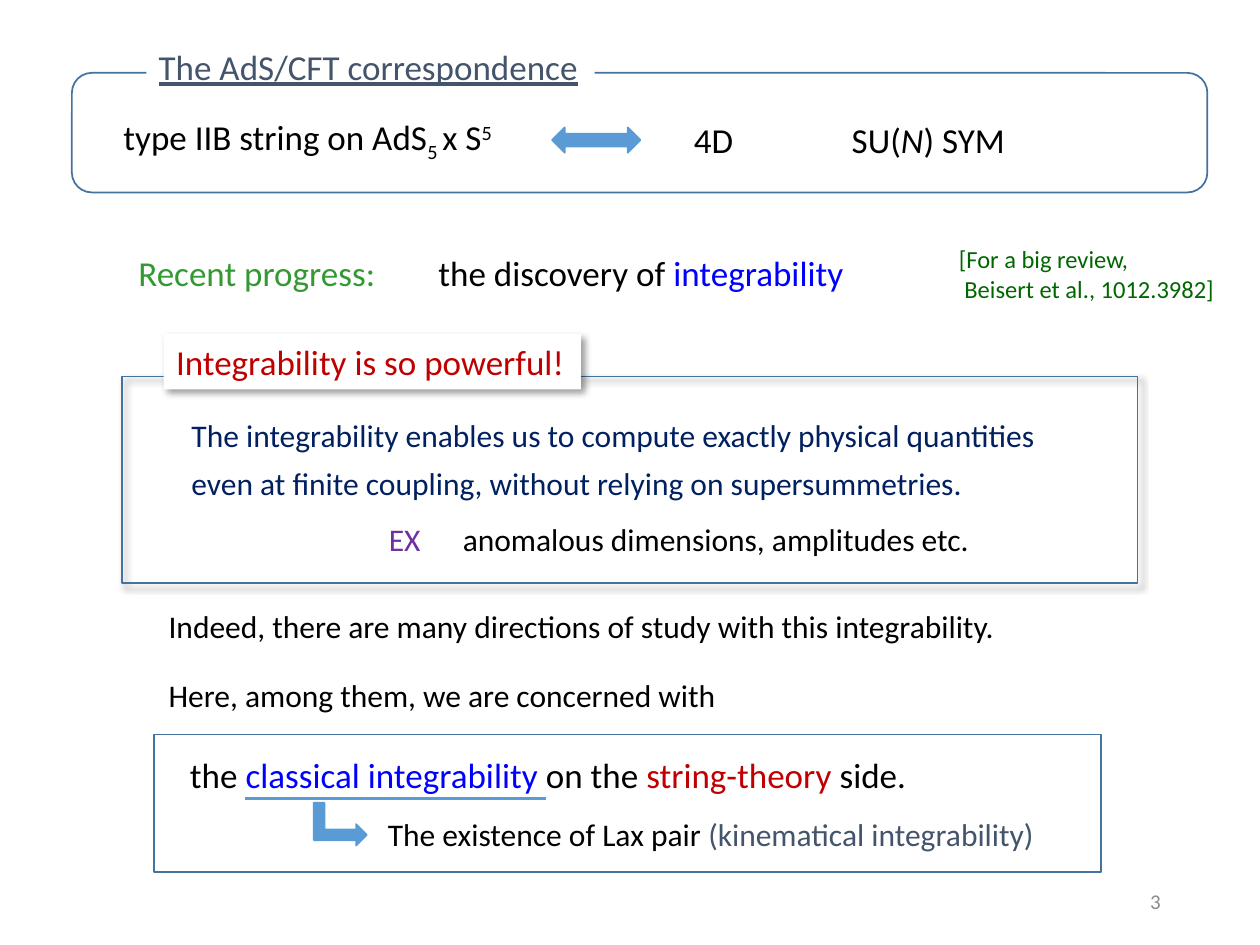
from lxml.etree import SubElement
from pptx import Presentation
from pptx.dml.color import RGBColor
from pptx.enum.shapes import MSO_CONNECTOR, MSO_SHAPE as SHAPE
from pptx.enum.text import MSO_ANCHOR, PP_ALIGN
from pptx.oxml.ns import qn
from pptx.util import Cm, Pt

COLOURS = {
    "black": "000000", "white": "FFFFFF", "grey": "8C8C8C", "slate": "44546A",
    "green": "339933", "dark green": "006600", "blue": "0000FF", "navy": "002060",
    "purple": "7030A0", "red": "C00000", "sky": "5B9BD5", "border": "43739E",
}
FONT = "Calibri"

# Frames: preset, (left, top, width, height) in cm, shadow
FRAMES = [
    (SHAPE.ROUNDED_RECTANGLE, (1.45, 1.47, 22.89, 2.41), False),
    (SHAPE.RECTANGLE, (2.46, 7.59, 20.47, 4.17), True),
    (SHAPE.RECTANGLE, (3.1, 14.81, 19.1, 2.77), False),
]

# Block arrows: preset, box in cm, rotation
ARROWS = [
    (SHAPE.LEFT_RIGHT_ARROW, (11.13, 2.57, 1.78, 0.51), 0),
    (SHAPE.BENT_UP_ARROW, (6.43, 16.08, 0.86, 1.07), 90),
]
UNDERLINE = (4.93, 16.1, 11.0, 16.1)

# Labels sitting on a frame's top edge: box, text, colour, underlined, shadow
LABELS = [
    ((2.95, 0.79, 9.04, 1.12), "The AdS/CFT correspondence", "slate", True, False),
    ((3.3, 6.73, 8.41, 1.12), "Integrability is so powerful!", "red", False, True),
]

# Texts: (left, top, width) in cm, size, paragraphs of (text, colour[, style]) runs
TEXTS = [
    ((2.24, 2.21, 8.6), 20, [[("type IIB string on AdS", "black"), ("5 ", "black", "sub"),
                              ("x S", "black"), ("5", "black", "super")]]),
    ((13.74, 2.26, 2.0), 20, [[("4D", "black")]]),
    ((16.92, 2.26, 4.5), 20, [[("SU(", "black"), ("N", "black", "italic"),
                               (") SYM", "black")]]),
    ((2.54, 4.95, 5.6), 20, [[("Recent progress:", "green")]]),
    ((8.59, 4.95, 9.0), 20, [[("the discovery of ", "black"), ("integrability", "blue")]]),
    ((19.08, 4.8, 5.9), 14, [[("[For a big review,", "dark green")],
                             [(" Beisert et al., 1012.3982]", "dark green")]]),
    ((3.61, 8.08, 18.0), 18, [
        [("The integrability enables us to compute exactly physical quantities", "navy")],
        [("even at finite coupling, without relying on supersummetries.", "navy")]]),
    ((7.59, 10.36, 1.5), 18, [[("EX", "purple")]]),
    ((9.08, 10.36, 11.2), 18, [[("anomalous dimensions, amplitudes etc.", "black")]]),
    ((3.15, 12.12, 17.6), 18, [
        [("Indeed, there are many directions of study with this integrability.", "black")]]),
    ((3.15, 13.51, 11.9), 18, [[("Here, among them, we are concerned with", "black")]]),
    ((3.58, 15.06, 15.5), 20, [[("the ", "black"), ("classical integrability ", "blue"),
                                ("on the ", "black"), ("string-theory", "red"),
                                (" side.", "black")]]),
    ((7.57, 16.31, 14.0), 18, [[("The existence of Lax pair ", "black"),
                                ("(kinematical integrability)", "slate")]]),
]
BASELINES = {"sub": "-25000", "super": "30000"}
LINE_SPACING = {18: 1.25}  # for two-line statements of this size


def rgb(name):
    return RGBColor.from_string(COLOURS[name])


def cast_shadow(shape):
    effects = shape._element.spPr.find(qn("a:effectLst"))
    shadow = SubElement(effects, qn("a:outerShdw"), blurRad=str(Pt(4)), dist=str(Pt(3)),
                        dir="2700000", algn="tl", rotWithShape="0")
    black = SubElement(shadow, qn("a:srgbClr"), val=COLOURS["black"])
    SubElement(black, qn("a:alpha"), val="40000")


def add_preset(slide, preset, box, line, fill=None):
    shape = slide.shapes.add_shape(preset, *map(Cm, box))
    shape.shadow.inherit = False
    if fill:
        shape.fill.solid()
        shape.fill.fore_color.rgb = rgb(fill)
    else:
        shape.fill.background()
    shape.line.color.rgb = rgb(line)
    shape.line.width = Pt(1)
    return shape


def add_text(slide, box, size, paragraphs):
    holder = slide.shapes.add_textbox(*map(Cm, box))
    frame = holder.text_frame
    frame.word_wrap = True
    for index, runs in enumerate(paragraphs):
        paragraph = frame.add_paragraph() if index else frame.paragraphs[0]
        if len(paragraphs) > 1:
            paragraph.line_spacing = LINE_SPACING.get(size, 1.0)
        for text, colour, *styles in runs:
            run = paragraph.add_run()
            run.text = text
            run.font.name, run.font.size = FONT, Pt(size)
            run.font.color.rgb = rgb(colour)
            for style in styles:
                if style in BASELINES:
                    run._r.get_or_add_rPr().set("baseline", BASELINES[style])
                else:
                    setattr(run.font, style, True)
    return holder


prs = Presentation()
prs.slide_width, prs.slide_height = Cm(25.4), Cm(19.05)
slide = prs.slides.add_slide(prs.slide_layouts[6])

# Frames
for preset, box, has_shadow in FRAMES:
    panel = add_preset(slide, preset, box, "border")
    if has_shadow:
        cast_shadow(panel)

# Labels over the frame edges
for box, text, colour, underlined, has_shadow in LABELS:
    styles = ("underline",) if underlined else ()
    label = add_text(slide, box, 20, [[(text, colour, *styles)]])
    label.fill.solid()
    label.fill.fore_color.rgb = rgb("white")
    label.shadow.inherit = False
    if has_shadow:
        cast_shadow(label)

# Statements
for place, size, paragraphs in TEXTS:
    height = 0.25 + len(paragraphs) * size * 0.043
    add_text(slide, (*place, round(height, 2)), size, paragraphs)

# Arrows and the line under "classical integrability"
for preset, box, turn in ARROWS:
    add_preset(slide, preset, box, "sky", "sky").rotation = turn
underline = slide.shapes.add_connector(MSO_CONNECTOR.STRAIGHT, *map(Cm, UNDERLINE))
underline.line.color.rgb = rgb("sky")
underline.line.width = Pt(1.5)
SubElement(underline._element.spPr, qn("a:effectLst"))

# Page number
page_number = add_text(slide, (17.93, 17.65, 5.72, 1.02), 12, [[("3", "grey")]])
page_number.text_frame.vertical_anchor = MSO_ANCHOR.MIDDLE
page_number.text_frame.paragraphs[0].alignment = PP_ALIGN.RIGHT

prs.save("out.pptx")
